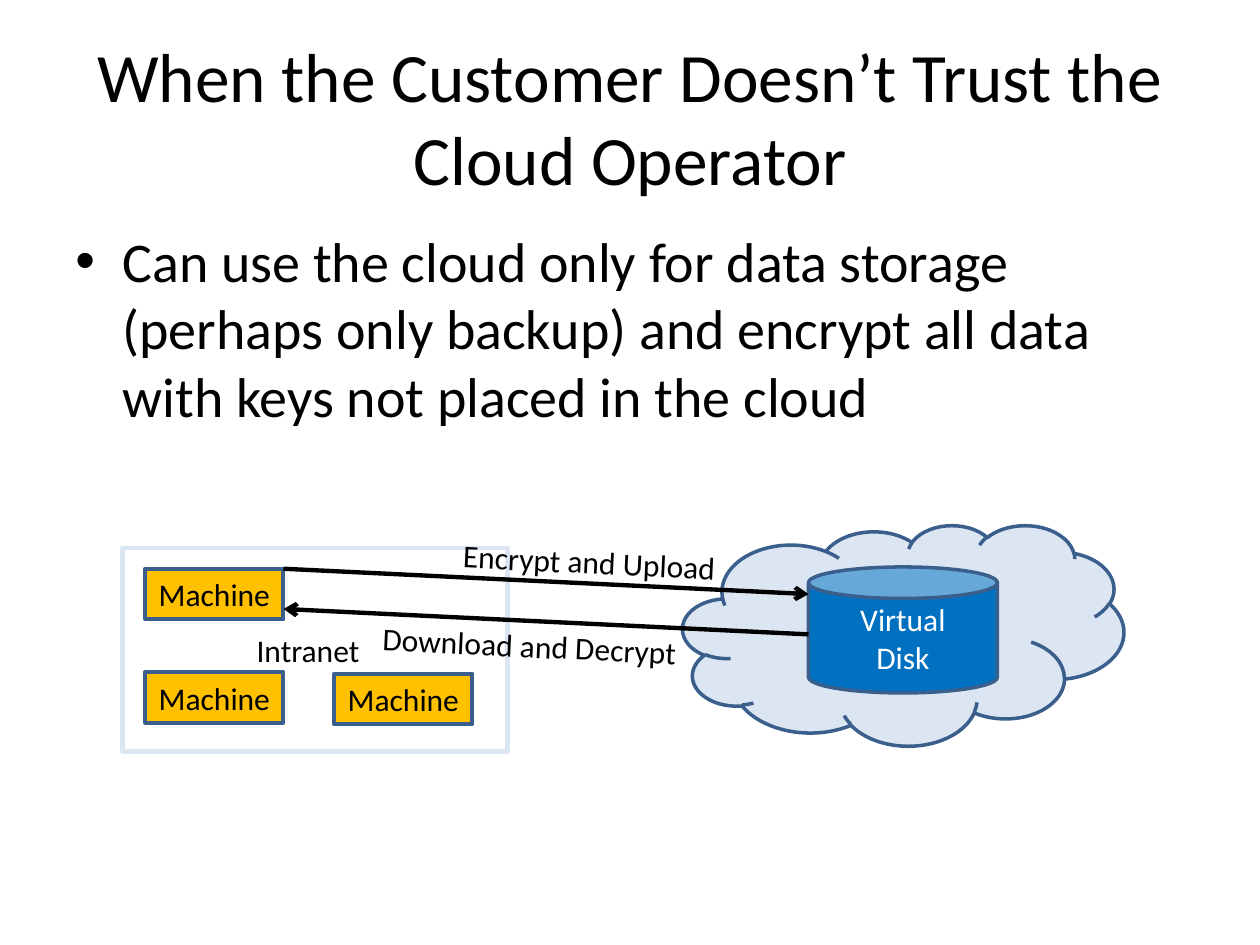
from dataclasses import dataclass
from math import atan2, degrees

from lxml.etree import SubElement
from pptx import Presentation
from pptx.dml.color import RGBColor
from pptx.enum.shapes import MSO_CONNECTOR as Conn, MSO_SHAPE as Shp
from pptx.enum.text import MSO_ANCHOR as Anchor, PP_ALIGN as Align
from pptx.oxml.ns import qn
from pptx.util import Pt

BLACK, WHITE = "000000", "FFFFFF"
OUTLINE, PALE, BLUE, AMBER = "3A5F8C", "DCE6F2", "0070C0", "FFC000"


@dataclass
class Box:
    x: float
    y: float
    w: float
    h: float
    kind: Shp = Shp.RECTANGLE
    fill: str | None = AMBER
    line: str = OUTLINE
    weight: float = 2.25
    lines: tuple[str, ...] = ()
    color: str = BLACK
    right_inset: float = 0


@dataclass
class Arrow:
    y1: float
    y2: float
    end: str


@dataclass
class Label:
    x: float
    y: float
    w: float
    text: str


LINK_X1, LINK_X2 = 162, 462
MACHINE_W, MACHINE_H = 79, 29

BOXES = [
    Box(390.2, 300, 252, 126, Shp.CLOUD, PALE, weight=2),
    Box(462, 324, 108, 72, Shp.CAN, BLUE, weight=2,
        lines=("Virtual", "Disk"), color=WHITE),
    Box(70, 313, 220, 116.5, fill=None, line=PALE, weight=2.5,
        lines=("Intranet",), right_inset=8),
] + [Box(x, y, MACHINE_W, MACHINE_H, lines=("Machine",))
     for x, y in ((83, 325), (83, 384), (191, 385))]
ARROWS = [Arrow(325, 339.5, "tailEnd"), Arrow(348, 362.5, "headEnd")]
LABELS = [Label(211.5, 354.5, 184.5, "Download and Decrypt"),
          Label(257.5, 306.5, 160.5, "Encrypt and Upload")]


def rgb(color: str) -> RGBColor:
    return RGBColor.from_string(color)


def add_run(p, text: str, size: float, color: str = BLACK) -> None:
    r = p.add_run()
    r.text = text
    r.font.name = "Calibri"
    r.font.size = Pt(size)
    r.font.color.rgb = rgb(color)


def add_box(s, box: Box) -> None:
    sp = s.shapes.add_shape(box.kind, Pt(box.x), Pt(box.y), Pt(box.w), Pt(box.h))
    sp.shadow.inherit = False
    if box.fill:
        sp.fill.solid()
        sp.fill.fore_color.rgb = rgb(box.fill)
    else:
        sp.fill.background()
    sp.line.color.rgb = rgb(box.line)
    sp.line.width = Pt(box.weight)
    tf = sp.text_frame
    tf.word_wrap = False
    tf.vertical_anchor = Anchor.MIDDLE
    tf.margin_left, tf.margin_right = Pt(0), Pt(box.right_inset)
    for i, line in enumerate(box.lines):
        p = tf.add_paragraph() if i else tf.paragraphs[0]
        p.alignment = Align.CENTER
        add_run(p, line, 18, box.color)


def add_arrow(s, arrow: Arrow) -> None:
    cx = s.shapes.add_connector(Conn.STRAIGHT, Pt(LINK_X1), Pt(arrow.y1),
                                Pt(LINK_X2), Pt(arrow.y2))
    cx.line.color.rgb = rgb(BLACK)
    cx.line.width = Pt(2.5)
    SubElement(cx.line._get_or_add_ln(), qn("a:" + arrow.end), type="arrow")
    SubElement(cx._element.spPr, qn("a:effectLst"))


def add_label(s, label: Label, angle: float) -> None:
    sp = s.shapes.add_textbox(Pt(label.x), Pt(label.y), Pt(label.w), Pt(29))
    sp.rotation = angle
    tf = sp.text_frame
    tf.word_wrap = False
    add_run(tf.paragraphs[0], label.text, 18)


def add_title(s, text: str) -> None:
    sp = s.shapes.title
    sp.left, sp.top, sp.width, sp.height = Pt(36), Pt(21.6), Pt(648), Pt(90)
    tf = sp.text_frame
    tf.word_wrap = True
    tf.vertical_anchor = Anchor.MIDDLE
    p = tf.paragraphs[0]
    p.alignment = Align.CENTER
    add_run(p, text, 39.6)


def add_bullet(s, text: str) -> None:
    sp = s.shapes.add_textbox(Pt(36), Pt(126), Pt(648), Pt(356.4))
    tf = sp.text_frame
    tf.word_wrap = True
    p = tf.paragraphs[0]
    pPr = p._p.get_or_add_pPr()
    pPr.set("marL", str(Pt(27)))
    pPr.set("indent", str(-Pt(27)))
    SubElement(pPr, qn("a:buFont"), typeface="Arial")
    SubElement(pPr, qn("a:buChar"), char="•")
    add_run(p, text, 32)


def main() -> None:
    prs = Presentation()
    prs.slide_width, prs.slide_height = Pt(720), Pt(540)
    s = prs.slides.add_slide(prs.slide_layouts[5])
    add_title(s, "When the Customer Doesn’t Trust the Cloud Operator")
    add_bullet(s, "Can use the cloud only for data storage (perhaps only backup) "
                  "and encrypt all data with keys not placed in the cloud")
    for box in BOXES:
        add_box(s, box)
    for arrow in ARROWS:
        add_arrow(s, arrow)
    slope = degrees(atan2(ARROWS[0].y2 - ARROWS[0].y1, LINK_X2 - LINK_X1))
    for label in LABELS:
        add_label(s, label, slope)
    prs.save("out.pptx")


if __name__ == "__main__":
    main()
